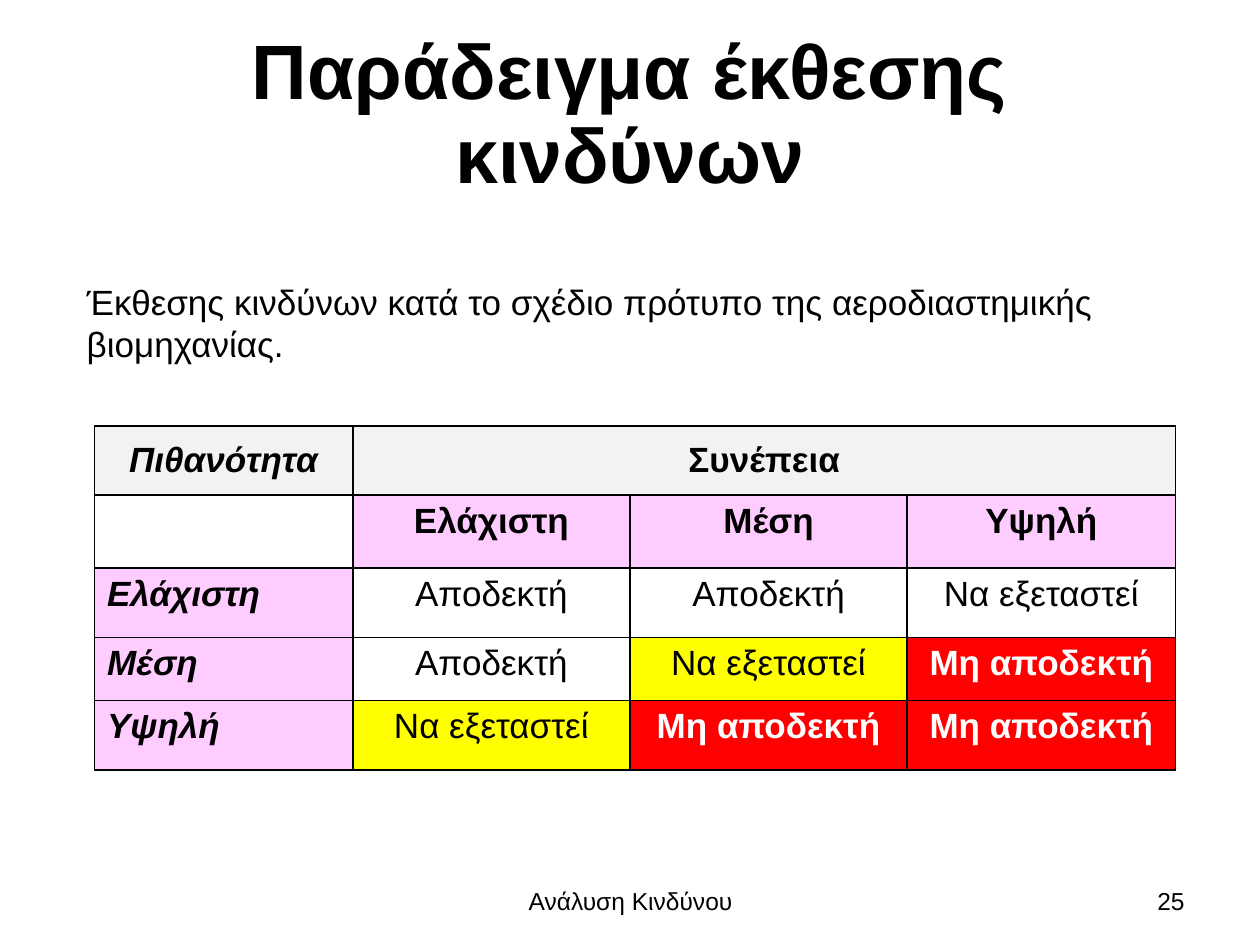
from lxml import etree
from pptx import Presentation
from pptx import util as u
from pptx.dml import color
from pptx.enum import text
from pptx.oxml import ns

BLACK, WHITE = "000000", "FFFFFF"
GREY, PINK, YELLOW, RED = "F2F2F2", "FFCCFF", "FFFF00", "FF0000"
LEFT, CENTER, RIGHT = text.PP_ALIGN.LEFT, text.PP_ALIGN.CENTER, text.PP_ALIGN.RIGHT
TOP, MIDDLE = text.MSO_ANCHOR.TOP, text.MSO_ANCHOR.MIDDLE
COLUMNS, ROWS = 100, 75


def rgb(value):
    return color.RGBColor.from_string(value)


class SlideBuilder:
    font_name = "Arial"

    def __init__(self, presentation):
        self.column = presentation.slide_width / COLUMNS
        self.row = presentation.slide_height / ROWS
        self.slide = presentation.slides.add_slide(presentation.slide_layouts[5])

    def box(self, left, top, width, height):
        return (round(left * self.column), round(top * self.row),
                round(width * self.column), round(height * self.row))

    def set_text(self, frame, wording, size, align=LEFT, bold=False, italic=False, ink=BLACK):
        paragraph = frame.paragraphs[0]
        paragraph.text = wording
        paragraph.alignment = align
        font = paragraph.font
        font.name, font.size = self.font_name, u.Pt(size)
        font.bold, font.italic = bold, italic
        font.color.rgb = rgb(ink)
        return paragraph

    def title(self, wording, *area):
        shape = self.slide.shapes.title
        shape.left, shape.top, shape.width, shape.height = self.box(*area)
        frame = shape.text_frame
        frame.auto_size = text.MSO_AUTO_SIZE.NONE
        frame.vertical_anchor = MIDDLE
        self.set_text(frame, wording, 44, CENTER, bold=True).line_spacing = 0.9

    def text_box(self, wording, *area, size=14, align=LEFT, anchor=MIDDLE):
        frame = self.slide.shapes.add_textbox(*self.box(*area)).text_frame
        frame.word_wrap = True
        frame.vertical_anchor = anchor
        self.set_text(frame, wording, size, align)

    def borders(self, cell):
        properties = cell._tc.get_or_add_tcPr()
        for side in ("a:lnL", "a:lnR", "a:lnT", "a:lnB"):
            line = etree.SubElement(properties, ns.qn(side), w=str(u.Pt(1)))
            fill = etree.SubElement(line, ns.qn("a:solidFill"))
            etree.SubElement(fill, ns.qn("a:srgbClr"), val=BLACK)

    def cell(self, cell, wording, fill, anchor=TOP, **style):
        self.borders(cell)
        cell.fill.solid()
        cell.fill.fore_color.rgb = rgb(fill)
        cell.vertical_anchor = anchor
        self.set_text(cell.text_frame, wording, 20, **style)

    def table(self, left, top, widths, heights):
        area = self.box(left, top, sum(widths), sum(heights))
        table = self.slide.shapes.add_table(len(heights), len(widths), *area).table
        for column, width in zip(table.columns, widths):
            column.width = round(width * self.column)
        for row, height in zip(table.rows, heights):
            row.height = round(height * self.row)
        return table

    def risk_table(self, table, likelihood, consequence, levels, ratings, looks):
        header = dict(anchor=MIDDLE, align=CENTER, bold=True)
        self.cell(table.cell(0, 0), likelihood, GREY, italic=True, **header)
        for index, wording in enumerate((consequence, "", ""), 1):
            self.cell(table.cell(0, index), wording, GREY, **header)
        table.cell(0, 1).merge(table.cell(0, len(levels)))
        self.cell(table.cell(1, 0), "", WHITE)
        for index, level in enumerate(levels, 1):
            self.cell(table.cell(1, index), level, PINK, align=CENTER, bold=True)
            self.cell(table.cell(index + 1, 0), level, PINK, bold=True, italic=True)
        for row, line in enumerate(ratings, 2):
            for column, rating in enumerate(line, 1):
                fill, ink = looks[row - 2][column - 1]
                self.cell(table.cell(row, column), rating, fill,
                          align=CENTER, bold=fill == RED, ink=ink)


def main():
    presentation = Presentation()
    presentation.slide_width, presentation.slide_height = u.Inches(10), u.Inches(7.5)
    builder = SlideBuilder(presentation)
    builder.title("Παράδειγμα έκθεσης κινδύνων", 5, 3, 90, 12.5)
    builder.text_box(
        "Έκθεσης κινδύνων κατά το σχέδιο πρότυπο της αεροδιαστημικής βιομηχανίας.",
        5.9, 21.8, 87.4, 7.7, size=20, anchor=TOP)

    accepted, review, rejected = "Αποδεκτή", "Να εξεταστεί", "Μη αποδεκτή"
    plain, warning, danger = (WHITE, BLACK), (YELLOW, BLACK), (RED, WHITE)
    table = builder.table(7.5, 33.8, (20.5, 22, 22, 21.3), (5.5, 5.8, 5.5, 5, 5.5))
    builder.risk_table(
        table, "Πιθανότητα", "Συνέπεια", ("Ελάχιστη", "Μέση", "Υψηλή"),
        ((accepted, accepted, review),
         (accepted, review, rejected),
         (review, rejected, rejected)),
        ((plain, plain, plain),
         (plain, warning, danger),
         (warning, danger, danger)))

    builder.text_box("Ανάλυση Κινδύνου", 34.2, 69.5, 31.7, 4, align=CENTER)
    builder.text_box("25", 71.7, 69.5, 23.3, 4, align=RIGHT)
    presentation.save("out.pptx")


if __name__ == "__main__":
    main()
